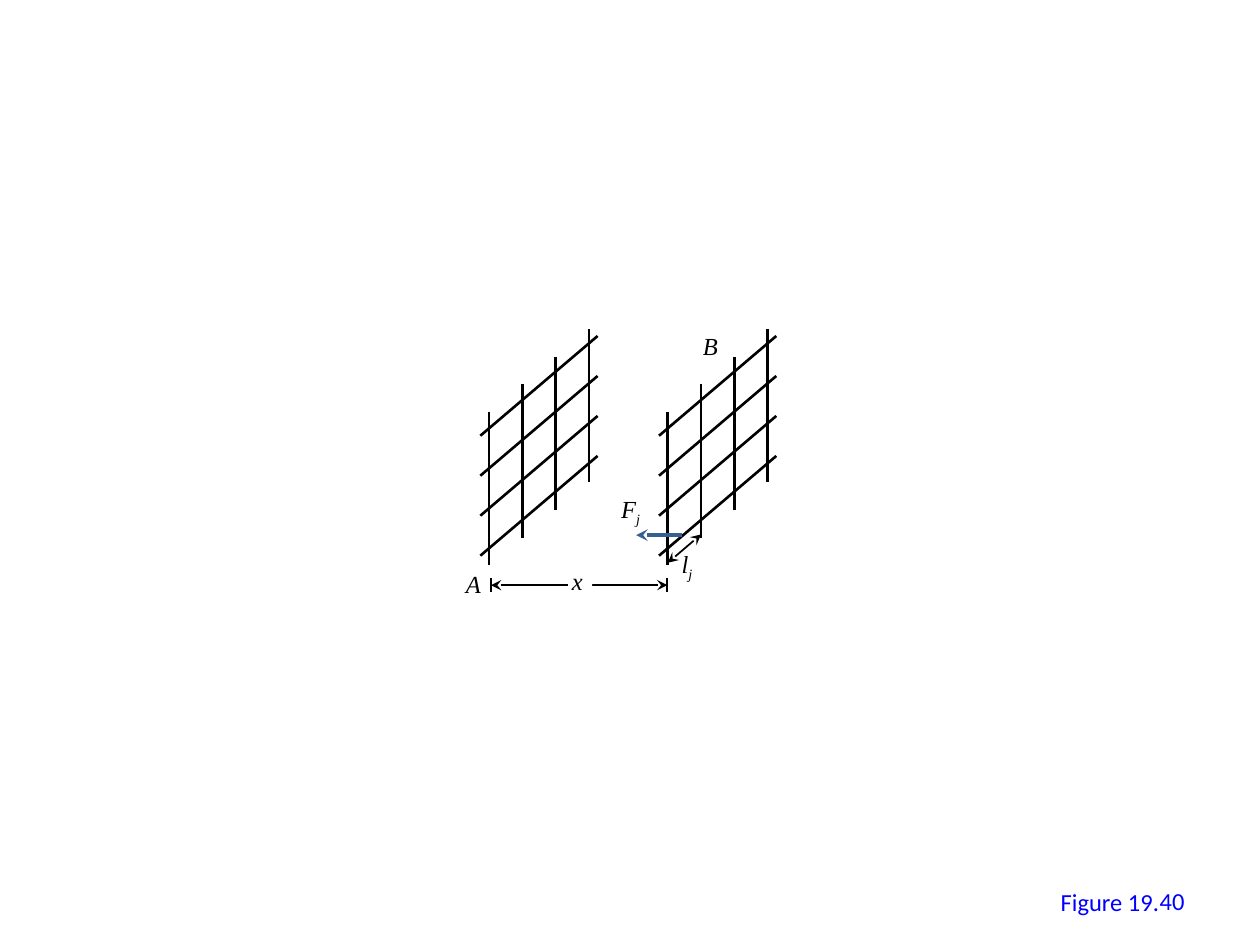
from lxml import etree
from pptx import Presentation
from pptx.dml.color import RGBColor
from pptx.enum import shapes, text
from pptx.oxml import ns
from pptx.util import Pt

prs = Presentation()
prs.slide_width, prs.slide_height = Pt(720), Pt(540)
s = prs.slides.add_slide(prs.slide_layouts[6])


def add_line(x1, y1, x2, y2, width=1, color="000000", ends=()):
    ln = s.shapes.add_connector(shapes.MSO_CONNECTOR.STRAIGHT, Pt(x1), Pt(y1), Pt(x2), Pt(y2))
    ln.line.width = Pt(width)
    ln.line.color.rgb = RGBColor.from_string(color)
    for end in ends:
        etree.SubElement(ln.line._get_or_add_ln(), ns.qn("a:" + end), type="stealth")
    etree.SubElement(ln._element.spPr, ns.qn("a:effectLst"))


def add_label(x, y, w, h, words, sub="", font="Times New Roman", color="000000", italic=True):
    tf = s.shapes.add_textbox(Pt(x), Pt(y), Pt(w), Pt(h)).text_frame
    tf.word_wrap = False
    p = tf.paragraphs[0]
    p.text = words
    if sub:
        r = p.add_run()
        r.text = sub
        r.font._element.set("baseline", "-25000")
    for r in p.runs:
        r.font.name, r.font.size, r.font.italic = font, Pt(14), italic
        r.font.color.rgb = RGBColor.from_string(color)
    return tf


for left in (279.5, 381.6):
    for i in range(4):
        x, y = left + 19 * i, 235.4 - 15.8 * i
        add_line(x, y, x, y + 87.6, 1.5)
    for i in range(4):
        y = 192 + 22.85 * i
        add_line(left + 62, y, left - 5, y + 57, 1.5)

add_line(389.5, 305.8, 363.5, 305.8, 2.25, "376092", ["tailEnd"])
add_line(280.6, 334.4, 381.4, 334.4, ends=["headEnd", "tailEnd"])
for x in (280.6, 381.2):
    add_line(x, 338.2, x, 330.4)

sp = s.shapes.add_shape(shapes.MSO_SHAPE.RECTANGLE, Pt(324.6), Pt(329), Pt(13.8), Pt(11))
sp.shadow.inherit = False
sp.fill.solid()
sp.fill.fore_color.rgb = RGBColor.from_string("FFFFFF")
sp.line.fill.background()

add_line(381.6, 321.6, 400.6, 305.4, ends=["headEnd", "tailEnd"])

for x, y, w, words, sub in [
    (382.4, 310.3, 24.5, "l", "j"),
    (319.7, 319.7, 24.5, "x", ""),
    (259.2, 321.8, 26.6, "A", ""),
    (394.6, 185.8, 26.6, "B", ""),
    (347.8, 278.6, 29.5, "F", "j"),
]:
    add_label(x, y, w, 24.5, words, sub)

add_label(599, 503.3, 71.3, 24.5, "Figure 19.", font="Calibri", color="0000FF", italic=False)
tf = add_label(516.2, 500.4, 167.8, 28.8, "40", font="Calibri", color="0000FF", italic=False)
tf.word_wrap = True
tf.vertical_anchor = text.MSO_ANCHOR.MIDDLE
tf.paragraphs[0].alignment = text.PP_ALIGN.RIGHT

prs.save("out.pptx")
